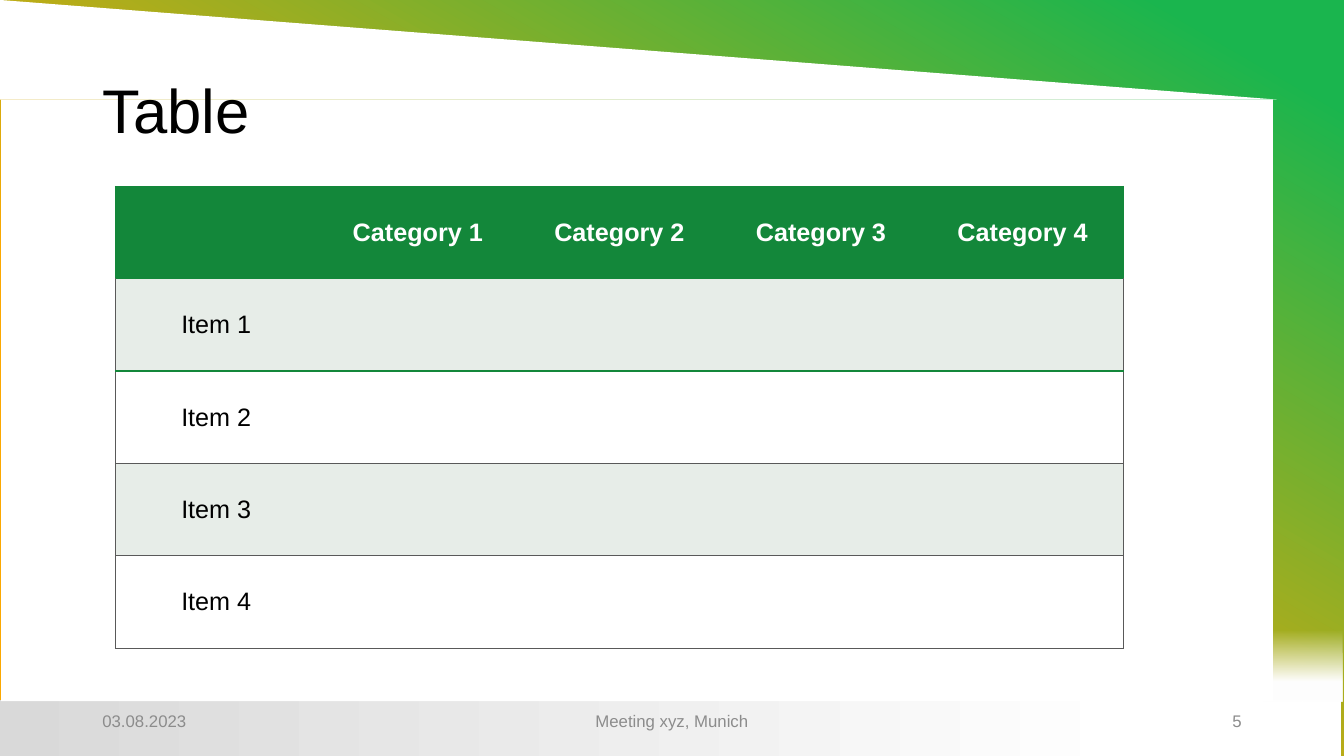
from lxml.etree import SubElement
from pptx import Presentation
from pptx.dml.color import RGBColor
from pptx.enum.shapes import MSO_SHAPE
from pptx.enum.text import MSO_ANCHOR, PP_ALIGN
from pptx.oxml.ns import qn
from pptx.util import Cm, Pt

WHITE = RGBColor(0xFF, 0xFF, 0xFF)
BLACK = RGBColor(0, 0, 0)
LIME = RGBColor(0x1A, 0xB5, 0x4E)
GOLD = RGBColor(0xFB, 0xA8, 0x01)
SILVER = RGBColor(0xD9, 0xD9, 0xD9)
GREY = RGBColor(0x8C, 0x8C, 0x8C)
GREEN = RGBColor(0x13, 0x87, 0x3A)
MINT = RGBColor(0xE7, 0xED, 0xE8)
SLATE = RGBColor(0x59, 0x59, 0x59)

FONT = "Arial"
PLAIN = "{2D5ABB26-0587-4C30-8999-92F81FD0307C}"  # table style without grid
WIDTH, HEIGHT = 33.87, 19.05


def place(shape, box):
    shape.left, shape.top, shape.width, shape.height = map(Cm, box)


def style(para, size, color, align, bold=False):
    para.alignment = align
    for run in para.runs:
        font = run.font
        font.name, font.size, font.bold = FONT, Pt(size), bold
        font.color.rgb = color


def add_block(slide, box, kind=MSO_SHAPE.RECTANGLE):
    """Add a white shape without outline or shadow."""
    block = slide.shapes.add_shape(kind, *map(Cm, box))
    block.shadow.inherit = False
    block.line.fill.background()
    block.fill.solid()
    block.fill.fore_color.rgb = WHITE
    return block


def blend(shape, angle, *stops):
    """Fill with a two-stop gradient; the angle runs counter-clockwise."""
    shape.fill.gradient()
    shape.fill.gradient_angle = angle
    for stop, (place_at, color) in zip(shape.fill.gradient_stops, stops):
        stop.position = place_at
        stop.color.rgb = color


def add_frame(slide):
    blend(add_block(slide, (0, 0, WIDTH, HEIGHT)), 240, (0.07, LIME), (0.67, GOLD))
    blend(add_block(slide, (-0.03, 17.65, 33.83, 1.4)), 0, (0, SILVER), (0.85, WHITE))
    fade = add_block(slide, (31.85, 15.9, 1.98, 1.78))
    blend(fade, 90, (0.28, WHITE), (1, WHITE))
    clear = list(fade.element.iter(qn("a:srgbClr")))[-1]
    SubElement(clear, qn("a:alpha"), val="0")
    add_block(slide, (0.03, 2.51, 32.05, 15.16))
    add_block(slide, (0, 0, 32.18, 2.51), MSO_SHAPE.RIGHT_TRIANGLE)


def set_title(slide, box, text):
    title = slide.shapes.title
    place(title, box)
    title.element.getparent().append(title.element)  # bring to front
    frame = title.text_frame
    frame.text = text
    frame.vertical_anchor = MSO_ANCHOR.MIDDLE
    para = frame.paragraphs[0]
    para.line_spacing = 0.9
    style(para, 44, BLACK, PP_ALIGN.LEFT)


def add_footer(slide, box, date, event, page):
    left, top, width, height = box
    side, mid = 7.62, 11.43
    parts = (
        (date, left, side, PP_ALIGN.LEFT),
        (event, left + (width - mid) / 2, mid, PP_ALIGN.CENTER),
        (page, left + width - side, side, PP_ALIGN.RIGHT),
    )
    for text, start, span, align in parts:
        label = slide.shapes.add_textbox(*map(Cm, (start, top, span, height)))
        frame = label.text_frame
        frame.word_wrap = True
        frame.vertical_anchor = MSO_ANCHOR.MIDDLE
        frame.text = text
        style(frame.paragraphs[0], 12, GREY, align)


def add_edge(cell, tag, color, width):
    props = cell._tc.get_or_add_tcPr()
    line = SubElement(props, qn(tag), w=str(Pt(width)))
    fill = SubElement(line, qn("a:solidFill"))
    SubElement(fill, qn("a:srgbClr"), val=str(color))


def add_grid(slide, box, heads, items):
    rows = [["", *heads]] + [[item] + [""] * len(heads) for item in items]
    count = len(rows[0])
    shape = slide.shapes.add_table(len(rows), count, *map(Cm, box))
    table = shape.table
    next(shape.element.iter(qn("a:tableStyleId"))).text = PLAIN
    # One rule above each row and one below the last
    rules = [(GREEN, 1)] * 2 + [(GREEN, 1.5)] + [(SLATE, 0.75)] * (len(rows) - 2)
    for r, row in enumerate(rows):
        side = (SLATE, 0.75) if r else (GREEN, 1)
        for c, text in enumerate(row):
            cell = table.cell(r, c)
            if c == 0:
                add_edge(cell, "a:lnL", *side)
            if c == count - 1:
                add_edge(cell, "a:lnR", *side)
            add_edge(cell, "a:lnT", *rules[r])
            add_edge(cell, "a:lnB", *rules[r + 1])
            cell.fill.solid()
            cell.fill.fore_color.rgb = MINT if r % 2 else WHITE if r else GREEN
            cell.vertical_anchor = MSO_ANCHOR.MIDDLE
            if text:
                cell.text = text
                para = cell.text_frame.paragraphs[0]
                style(para, 18, BLACK if r else WHITE, PP_ALIGN.CENTER, r == 0)


def main():
    deck = Presentation()
    deck.slide_width, deck.slide_height = Cm(WIDTH), Cm(HEIGHT)
    slide = deck.slides.add_slide(deck.slide_layouts[5])
    add_frame(slide)
    set_title(slide, (2.33, 1.01, 29.21, 3.68), "Table")
    add_footer(slide, (2.33, 17.66, 29.21, 1.01),
               "03.08.2023", "Meeting xyz, Munich", "5")
    add_grid(slide, (2.91, 4.7, 25.4, 11.63),
             [f"Category {n}" for n in range(1, 5)],
             [f"Item {n}" for n in range(1, 5)])
    deck.save("out.pptx")


if __name__ == "__main__":
    main()
